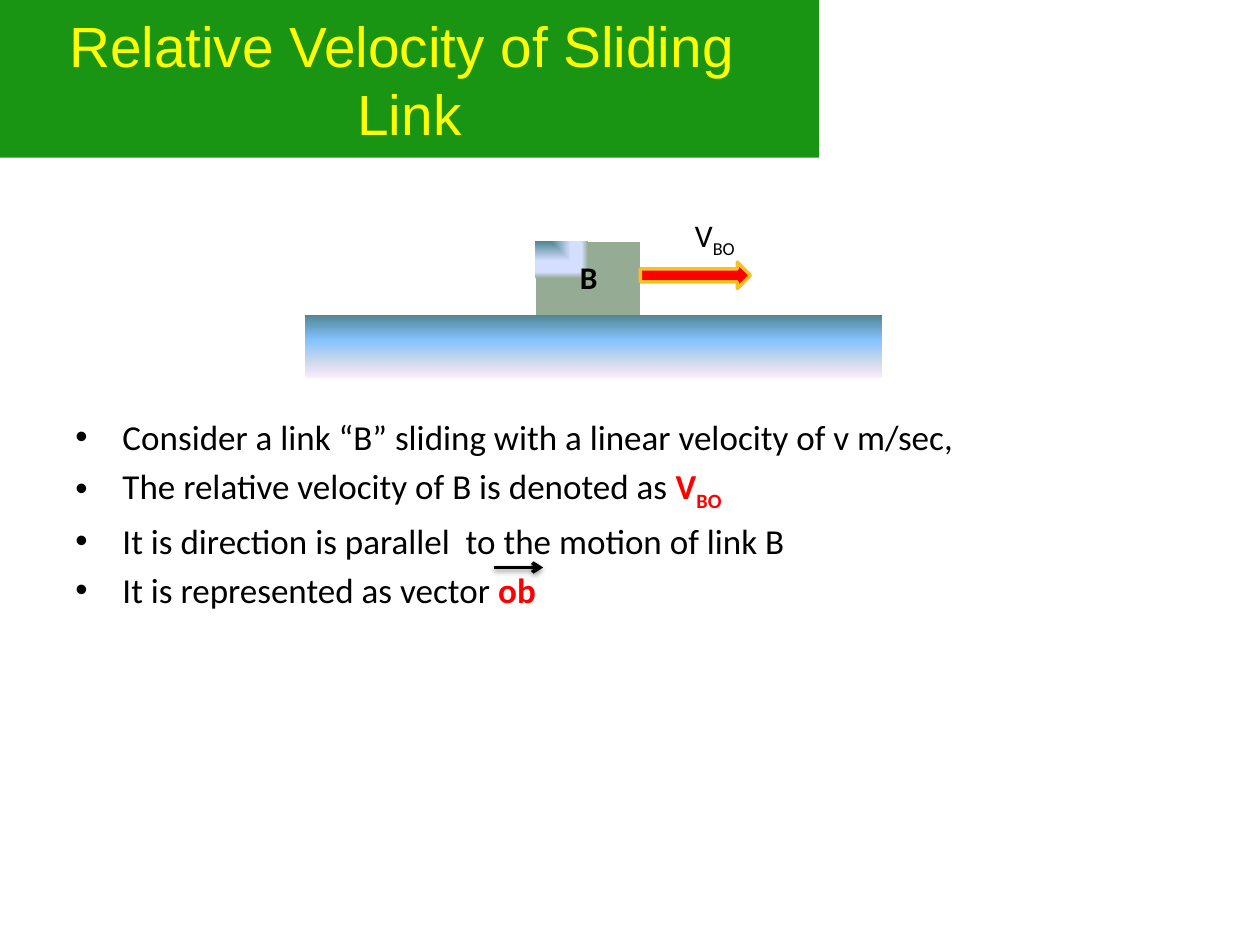
from lxml import etree
from pptx import Presentation
from pptx.dml.color import RGBColor
from pptx.enum.shapes import MSO_CONNECTOR, MSO_SHAPE
from pptx.enum.text import MSO_ANCHOR, MSO_AUTO_SIZE, PP_ALIGN
from pptx.oxml import parse_xml
from pptx.oxml.ns import nsdecls, qn
from pptx.util import Cm, Pt

GREEN = RGBColor(0x19, 0x95, 0x13)
YELLOW = RGBColor(0xFF, 0xFF, 0x00)
RED = RGBColor(0xFF, 0x00, 0x00)
GOLD = RGBColor(0xF7, 0xC1, 0x20)
BLACK = RGBColor(0x00, 0x00, 0x00)
GROUND_STOPS = [(0, "528693"), (40, "85C2FF"), (70, "C4D6EB"), (100, "FFEBFA")]
BLOCK_STOPS = [(0, "528693"), (53, "D4DEFF"), (83, "D4DEFF"), (100, "96AB94")]
LINEAR = '<a:lin ang="5400000" scaled="0"/>'
FROM_CORNER = '<a:path path="rect"><a:fillToRect r="100000" b="100000"/></a:path>'

PLAIN = {"name": "Calibri", "size": Pt(20), "bold": False}
PLAIN_BLACK = (PLAIN, BLACK)
STRONG_RED = ({**PLAIN, "bold": True}, RED)
LABEL = ({**PLAIN, "size": Pt(18)}, BLACK)
BLOCK_LABEL = ({**PLAIN, "size": Pt(18), "bold": True}, BLACK)

STATEMENTS = [
    [("Consider a link “B” sliding with a linear velocity of v m/sec,", PLAIN_BLACK)],
    [("The relative velocity of B is denoted as", PLAIN_BLACK),
     (" V", STRONG_RED), ("BO", STRONG_RED, True)],
    [("It is direction is parallel  to the motion of link B", PLAIN_BLACK)],
    [("It is represented as vector ", PLAIN_BLACK), ("ob", STRONG_RED)],
]


def add_run(paragraph, text, style, subscript=False):
    run = paragraph.add_run()
    run.text = text
    values, color = style
    for attribute, value in values.items():
        setattr(run.font, attribute, value)
    run.font.color.rgb = color
    if subscript:
        run._r.get_or_add_rPr().set("baseline", "-25000")


def add_label(slide, left, top, width, height, runs):
    frame = slide.shapes.add_textbox(left, top, width, height).text_frame
    frame.word_wrap = True
    frame.auto_size = MSO_AUTO_SIZE.SHAPE_TO_FIT_TEXT
    for run in runs:
        add_run(frame.paragraphs[0], *run)


def add_gradient_rect(slide, left, top, width, height, stops, direction):
    rect = slide.shapes.add_shape(MSO_SHAPE.RECTANGLE, left, top, width, height)
    rect.shadow.inherit = False
    rect.line.fill.background()
    rect.fill.gradient()
    stop_xml = "".join(
        f'<a:gs pos="{position * 1000}"><a:srgbClr val="{color}"/></a:gs>'
        for position, color in stops)
    gradient = rect._element.spPr.find(qn("a:gradFill"))
    gradient.getparent().replace(gradient, parse_xml(
        f'<a:gradFill {nsdecls("a")} rotWithShape="1">'
        f'<a:gsLst>{stop_xml}</a:gsLst>{direction}</a:gradFill>'))


def build_title(slide, left, top, width, height):
    title = slide.shapes.title
    box = {"left": left, "top": top, "width": width, "height": height}
    for attribute, value in box.items():
        setattr(title, attribute, value)
    title.fill.solid()
    title.fill.fore_color.rgb = GREEN
    frame = title.text_frame
    frame.auto_size = MSO_AUTO_SIZE.NONE
    frame.vertical_anchor = MSO_ANCHOR.MIDDLE
    heading = frame.paragraphs[0]
    heading.alignment = PP_ALIGN.CENTER
    add_run(heading, "Relative Velocity of Sliding  Link",
            ({"name": "Arial", "size": Pt(32.4)}, YELLOW))


def build_statements(slide, left, top, width, height):
    frame = slide.shapes.add_textbox(left, top, width, height).text_frame
    frame.word_wrap = True
    for index, runs in enumerate(STATEMENTS):
        paragraph = frame.add_paragraph() if index else frame.paragraphs[0]
        properties = paragraph._p.get_or_add_pPr()
        properties.set("marL", str(Cm(0.95)))
        properties.set("indent", str(-Cm(0.95)))
        etree.SubElement(properties, qn("a:buFont"), typeface="Arial")
        etree.SubElement(properties, qn("a:buChar"), char="•")
        paragraph.space_before = Pt(4 if index else 0)
        for run in runs:
            add_run(paragraph, *run)

    # Vector arrow above "ob"
    arrow_left, arrow_top = left + Cm(8.68), top + Cm(3.18)
    vector = slide.shapes.add_connector(
        MSO_CONNECTOR.STRAIGHT, arrow_left, arrow_top, arrow_left + Cm(1), arrow_top)
    vector.line.color.rgb = BLACK
    vector.line.width = Pt(2)
    etree.SubElement(vector.line._get_or_add_ln(), qn("a:tailEnd"), type="arrow")
    vector._element.spPr.append(parse_xml(
        f'<a:effectLst {nsdecls("a")}>'
        f'<a:outerShdw blurRad="{Pt(3.1)}" dist="{Pt(1.6)}" dir="5400000" rotWithShape="0">'
        '<a:srgbClr val="000000"><a:alpha val="38000"/></a:srgbClr>'
        '</a:outerShdw></a:effectLst>'))


def build_sliding_link(slide, left, top, width, height):
    # Ground along the bottom, block B standing on it
    ground_height, block_height = Cm(1.27), Cm(1.48)
    ground_top = top + height - ground_height
    block_left, block_width = left + Cm(4.66), Cm(2.11)
    add_gradient_rect(slide, left, ground_top, width, ground_height,
                      GROUND_STOPS, LINEAR)
    add_gradient_rect(slide, block_left, ground_top - block_height,
                      block_width, block_height, BLOCK_STOPS, FROM_CORNER)

    # Velocity arrow starting at the right side of the block
    thickness, length = Cm(0.53), Cm(2.22)
    center_x = block_left + block_width + length // 2
    center_y = top + Cm(1.32)
    velocity = slide.shapes.add_shape(
        MSO_SHAPE.DOWN_ARROW, center_x - thickness // 2, center_y - length // 2,
        thickness, length)
    velocity.rotation = 270
    velocity.shadow.inherit = False
    velocity.fill.solid()
    velocity.fill.fore_color.rgb = RED
    velocity.line.color.rgb = GOLD
    velocity.line.width = Pt(2)

    # Labels
    add_label(slide, block_left + Cm(0.64), top + Cm(0.85), Cm(0.85), Cm(1.03),
              [("B", BLOCK_LABEL)])
    add_label(slide, left + Cm(7.62), top, Cm(1.48), Cm(1.03),
              [("V", LABEL), ("BO", LABEL, True)])


def main():
    presentation = Presentation()
    presentation.slide_width, presentation.slide_height = Cm(25.4), Cm(19.05)
    slide = presentation.slides.add_slide(presentation.slide_layouts[5])
    build_title(slide, Cm(0), Cm(0), Cm(16.51), Cm(3.18))
    build_statements(slide, Cm(1.27), Cm(8.26), Cm(22.86), Cm(4.87))
    build_sliding_link(slide, Cm(6.14), Cm(4.23), Cm(11.64), Cm(3.39))
    presentation.save("out.pptx")


if __name__ == "__main__":
    main()
